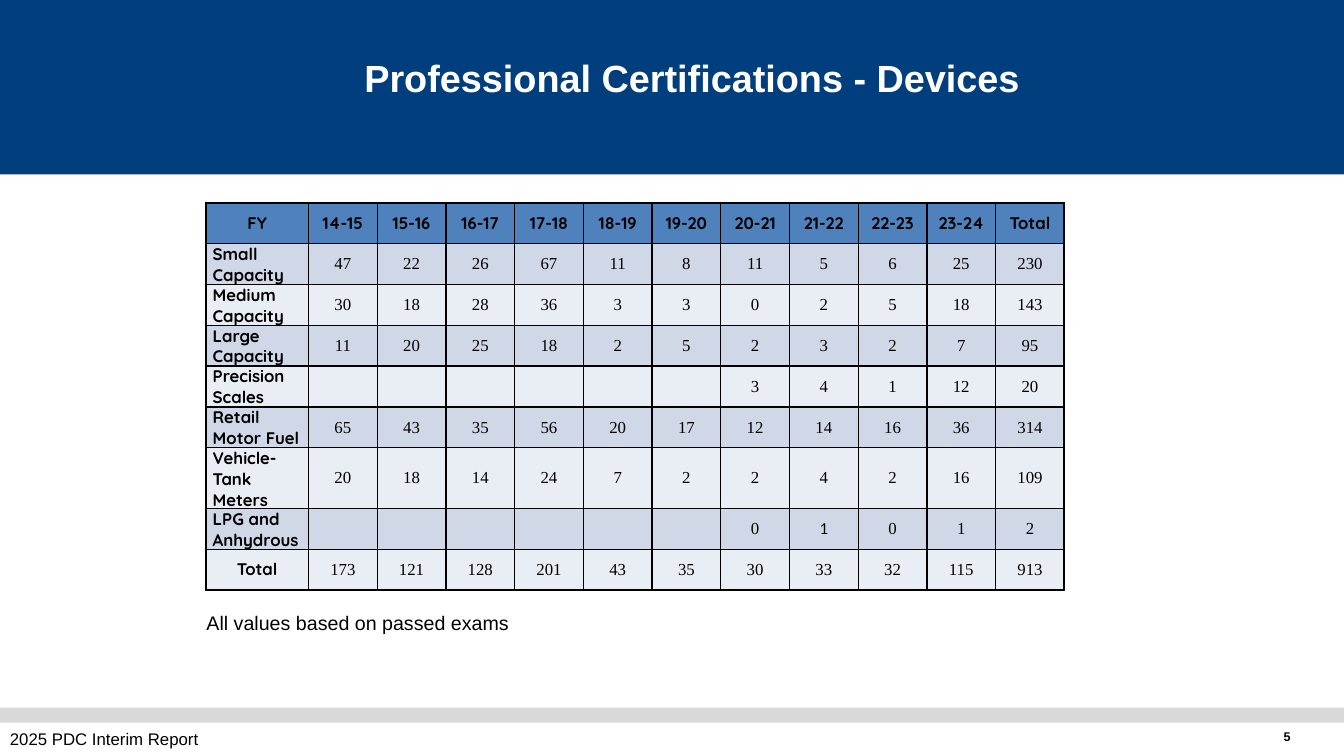
from lxml.etree import SubElement
from pptx import Presentation
from pptx.dml.color import RGBColor
from pptx.enum.shapes import MSO_SHAPE
from pptx.enum.text import MSO_ANCHOR, PP_ALIGN
from pptx.oxml.ns import qn
from pptx.util import Inches, Pt

COLORS = {
    "banner": "003E7E", "rule": "D9D9D9", "header": "4F81BD",
    "odd": "D0D8E8", "even": "E9EDF4", "text": "000000", "title": "FFFFFF",
}
TITLE = "Professional Certifications - Devices"
BANDS = [
    (0, 1.73, "banner"),
    (7.02, 0.15, "rule"),
]
NOTES = [
    ("5", (11.4, 7.18, 1.5, 0.17), 9, True, PP_ALIGN.RIGHT, True),
    ("All values based on passed exams", (1.95, 6.01, 7, 0.34), 14, False, PP_ALIGN.LEFT, True),
    ("2025 PDC Interim Report", (0, 7.18, 2.09, 0.3), 12, False, PP_ALIGN.LEFT, False),
]
ROWS = [
    ["FY", "14-15", "15-16", "16-17", "17-18", "18-19", "19-20", "20-21", "21-22", "22-23", "23-24", "Total"],
    ["Small Capacity", 47, 22, 26, 67, 11, 8, 11, 5, 6, 25, 230],
    ["Medium Capacity", 30, 18, 28, 36, 3, 3, 0, 2, 5, 18, 143],
    ["Large Capacity", 11, 20, 25, 18, 2, 5, 2, 3, 2, 7, 95],
    ["Precision Scales", "", "", "", "", "", "", 3, 4, 1, 12, 20],
    ["Retail Motor Fuel", 65, 43, 35, 56, 20, 17, 12, 14, 16, 36, 314],
    ["Vehicle-Tank Meters", 20, 18, 14, 24, 7, 2, 2, 4, 2, 16, 109],
    ["LPG and Anhydrous", "", "", "", "", "", "", 0, 1, 0, 1, 2],
    ["Total", 173, 121, 128, 201, 43, 35, 30, 33, 32, 115, 913],
]
CALIBRI_CELL = (7, 8)
LABEL_WIDTH, YEARS_WIDTH, TABLE_HEIGHT = 1.02, 7.5, 3.65


def rgb(name):
    return RGBColor.from_string(COLORS[name])


def style(p, size, font, color="text", bold=False, align=PP_ALIGN.LEFT):
    p.alignment = align
    p.font.size = Pt(size)
    p.font.name = font
    p.font.bold = bold
    p.font.color.rgb = rgb(color)


def set_borders(cell, widths):
    tcPr = cell._tc.get_or_add_tcPr()
    for side, width in widths.items():
        ln = SubElement(tcPr, qn(f"a:ln{side}"), w=str(Pt(width)))
        fill = SubElement(ln, qn("a:solidFill"))
        SubElement(fill, qn("a:srgbClr"), val=COLORS["text"])


def fill_cell(cell, value, row, col):
    last_row, last_col = len(ROWS) - 1, len(ROWS[0]) - 1
    set_borders(cell, {
        "L": 1.5 if col == 0 else 1,
        "R": 1.5 if col == last_col else 1,
        "T": 1.5 if row == 0 else 1,
        "B": 1.5 if row == last_row else 1,
    })
    cell.fill.solid()
    cell.fill.fore_color.rgb = rgb("header" if row == 0 else "odd" if row % 2 else "even")
    cell.vertical_anchor = MSO_ANCHOR.MIDDLE
    cell.margin_left = cell.margin_right = Inches(0.07)
    cell.margin_top = cell.margin_bottom = 0
    cell.text = str(value)
    label = row == 0 or col == 0
    font = "Quicksand" if label else "Calibri" if (row, col) == CALIBRI_CELL else "Times New Roman"
    left = col == 0 and 0 < row < last_row
    style(cell.text_frame.paragraphs[0], 12, font, bold=label,
          align=PP_ALIGN.LEFT if left else PP_ALIGN.CENTER)


def add_table(slide):
    years = len(ROWS[0]) - 1
    table = slide.shapes.add_table(
        len(ROWS), years + 1, Inches(2.04), Inches(2.01),
        Inches(LABEL_WIDTH + YEARS_WIDTH), Inches(TABLE_HEIGHT)).table
    for i, column in enumerate(table.columns):
        column.width = Inches(YEARS_WIDTH / years if i else LABEL_WIDTH)
    for r, values in enumerate(ROWS):
        table.rows[r].height = Inches(TABLE_HEIGHT / len(ROWS))
        for c, value in enumerate(values):
            fill_cell(table.cell(r, c), value, r, c)


def main():
    prs = Presentation()
    prs.slide_width, prs.slide_height = Inches(13.33), Inches(7.5)
    slide = prs.slides.add_slide(prs.slide_layouts[5])

    for top, height, color in BANDS:
        sp = slide.shapes.add_shape(MSO_SHAPE.RECTANGLE, 0, Inches(top), prs.slide_width, Inches(height))
        sp.shadow.inherit = False
        sp.fill.solid()
        sp.fill.fore_color.rgb = rgb(color)
        sp.line.fill.background()

    title = slide.shapes.title
    title.element.getparent().append(title.element)
    title.left, title.top, title.width, title.height = map(Inches, (3.42, 0.49, 6.89, 0.9))
    title.text = TITLE
    title.text_frame.vertical_anchor = MSO_ANCHOR.TOP
    style(title.text_frame.paragraphs[0], 27, "Arial", "title", True, PP_ALIGN.CENTER)

    for text, box, size, bold, align, wrap in NOTES:
        tf = slide.shapes.add_textbox(*map(Inches, box)).text_frame
        tf.word_wrap = wrap
        tf.text = text
        style(tf.paragraphs[0], size, "Arial", bold=bold, align=align)

    add_table(slide)
    prs.save("out.pptx")


if __name__ == "__main__":
    main()
